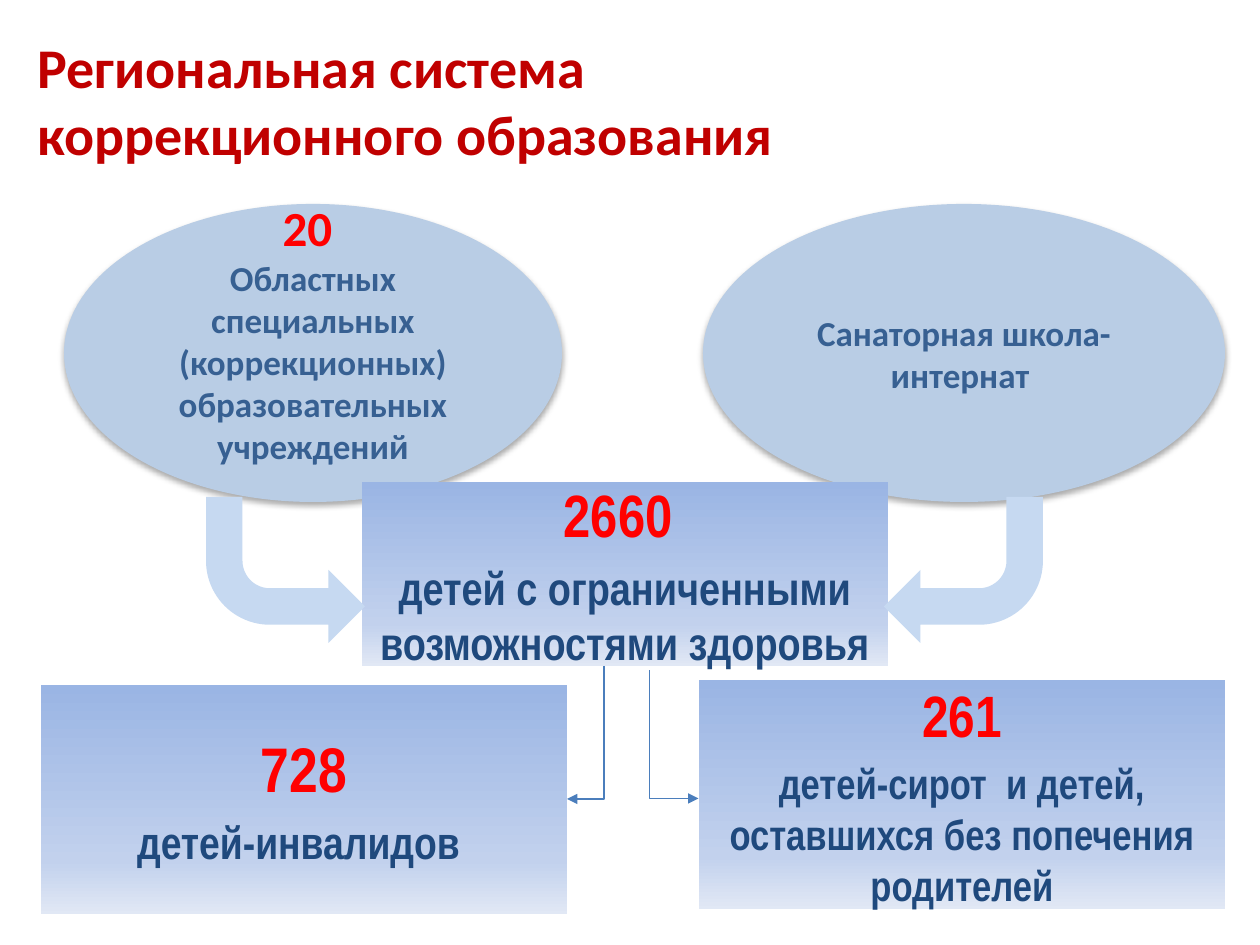
from copy import deepcopy

from lxml.etree import SubElement
from pptx import Presentation
from pptx.dml.color import RGBColor
from pptx.enum.shapes import MSO_CONNECTOR, MSO_SHAPE
from pptx.enum.text import MSO_ANCHOR, PP_ALIGN
from pptx.oxml.ns import qn
from pptx.util import Emu, Pt

PX = 914400 // 126
RED, STEEL, NAVY = "FF0000", "376092", "1F497D"
GRADIENT = [(0, "9AB5E4"), (0.77, "C2D1ED"), (1, "E1E8F5")]


def px(*values):
    """Turn pixel lengths into EMU."""
    return [Emu(value * PX) for value in values]


def color(value):
    """Return a colour from its hex string."""
    return RGBColor.from_string(value)


def write(frame, lines, font, align=PP_ALIGN.CENTER, spacing=0):
    """Write (text, size, colour) lines as bold paragraphs, spaced in proportion to size."""
    frame.word_wrap = True
    for index, (text, size, text_color) in enumerate(lines):
        paragraph = frame.add_paragraph() if index else frame.paragraphs[0]
        paragraph.alignment = align
        if index and spacing:
            paragraph.space_before = Pt(round(size * spacing, 1))
        run = paragraph.add_run()
        run.text = text
        run.font.name = font
        run.font.size = Pt(size)
        run.font.bold = True
        run.font.color.rgb = color(text_color)


def add_title(slide, box, text):
    """Add the slide title."""
    frame = slide.shapes.add_textbox(*px(*box)).text_frame
    write(frame, [(text, 32, "C00000")], "Calibri", PP_ALIGN.LEFT)


def add_plain_shape(slide, kind, box, fill):
    """Add a borderless preset shape without shadow."""
    shape = slide.shapes.add_shape(kind, *px(*box))
    shape.shadow.inherit = False
    shape.line.fill.background()
    shape.fill.solid()
    shape.fill.fore_color.rgb = color(fill)
    return shape


def add_ellipse(slide, box, lines, bottom_inset=6):
    """Add an institution ellipse with a soft shadow below."""
    shape = add_plain_shape(slide, MSO_SHAPE.OVAL, box, "B9CDE5")
    effects = shape._element.spPr.find(qn("a:effectLst"))
    shadow = SubElement(effects, qn("a:outerShdw"), blurRad=str(Pt(3.5)), dist=str(Pt(2.2)),
                        dir="5400000", rotWithShape="0")
    tint = SubElement(shadow, qn("a:srgbClr"), val="000000")
    SubElement(tint, qn("a:alpha"), val="32000")
    frame = shape.text_frame
    frame.vertical_anchor = MSO_ANCHOR.MIDDLE
    frame.margin_bottom = px(bottom_inset)[0]
    write(frame, lines, "Calibri")


def add_count_box(slide, box, number, label):
    """Add a gradient box with a red count over its label."""
    shape = add_plain_shape(slide, MSO_SHAPE.RECTANGLE, box, GRADIENT[0][1])
    shape.fill.gradient()
    shape.fill.gradient_angle = 270
    stop_list = shape._element.spPr.find(qn("a:gradFill")).find(qn("a:gsLst"))
    stop_list.append(deepcopy(stop_list[-1]))
    for stop, (position, value) in zip(shape.fill.gradient_stops, GRADIENT):
        stop.position = position
        stop.color.rgb = color(value)
    shape.text_frame.vertical_anchor = MSO_ANCHOR.MIDDLE
    write(shape.text_frame, [(*number, RED), (*label, NAVY)], "Arial Narrow", spacing=0.2)


def add_bent_arrow(slide, left, mirrored):
    """Add a block arrow turning from an ellipse into the central box."""
    shape = add_plain_shape(slide, MSO_SHAPE.BENT_ARROW, (left, 497, 159, 146), "C6D9F1")
    transform = shape._element.spPr.find(qn("a:xfrm"))
    transform.set("flipV", "1")
    if mirrored:
        transform.set("flipH", "1")


def add_branch(slide, start, end):
    """Add an arrow that runs down from start and then sideways to end."""
    (start_x, start_y), (end_x, end_y) = start, end
    width, height = end_y - start_y, abs(end_x - start_x)
    left = (start_x + end_x - width) // 2
    top = (start_y + end_y - height) // 2
    rightward = end_x > start_x
    first, last = (left + width, left) if rightward else (left, left + width)
    connector = slide.shapes.add_connector(MSO_CONNECTOR.ELBOW, *px(first, top, last, top + height))
    properties = connector._element.spPr
    properties.find(qn("a:xfrm")).set("rot", "16200000" if rightward else "5400000")
    properties.find(qn("a:prstGeom")).set("prst", "bentConnector2")
    connector.line.color.rgb = color("4B7EBC")
    connector.line.width = Pt(0.75)
    SubElement(properties.find(qn("a:ln")), qn("a:tailEnd"), type="triangle")
    SubElement(properties, qn("a:effectLst"))


def main():
    """Build the slide and save it."""
    presentation = Presentation()
    presentation.slide_width, presentation.slide_height = px(1260, 945)
    slide = presentation.slides.add_slide(presentation.slide_layouts[6])

    add_title(slide, (25, 26, 922, 149), "Региональная система коррекционного образования")
    add_ellipse(slide, (64, 204, 498, 298), [
        ("20 ", 28, RED),
        ("Областных специальных (коррекционных) образовательных учреждений", 20, STEEL),
    ], bottom_inset=48)
    add_ellipse(slide, (703, 204, 522, 298), [("Санаторная школа-интернат ", 20, STEEL)])

    add_count_box(slide, (362, 482, 526, 184), ("2660 ", 34.1),
                  ("детей с ограниченными возможностями здоровья", 26.4))
    add_count_box(slide, (41, 685, 526, 229), ("728", 36), ("детей-инвалидов ", 26))
    add_count_box(slide, (699, 680, 526, 229), ("261", 33.3),
                  ("детей-сирот  и детей, оставшихся без попечения родителей", 24.1))

    add_bent_arrow(slide, 206, mirrored=False)
    add_bent_arrow(slide, 884, mirrored=True)
    add_branch(slide, (604, 666), (567, 799))
    add_branch(slide, (650, 671), (699, 799))
    presentation.save("out.pptx")


if __name__ == "__main__":
    main()
